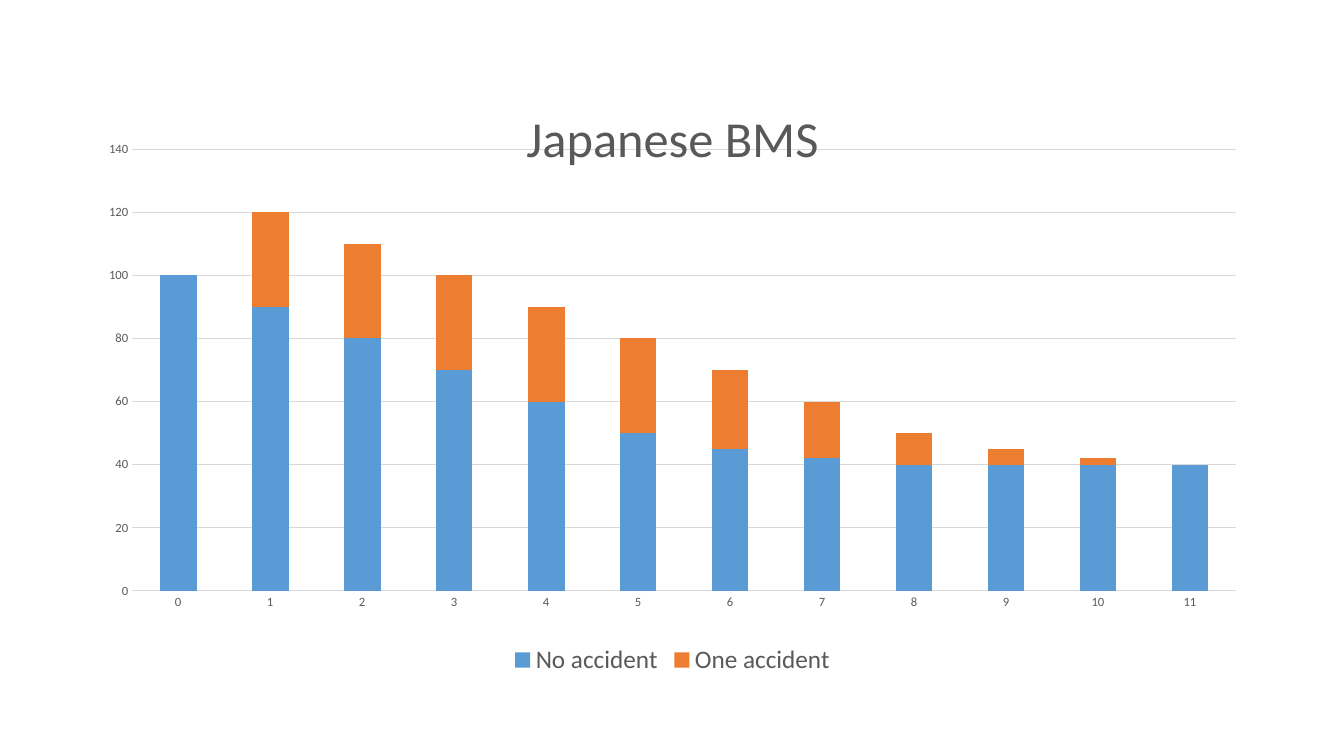
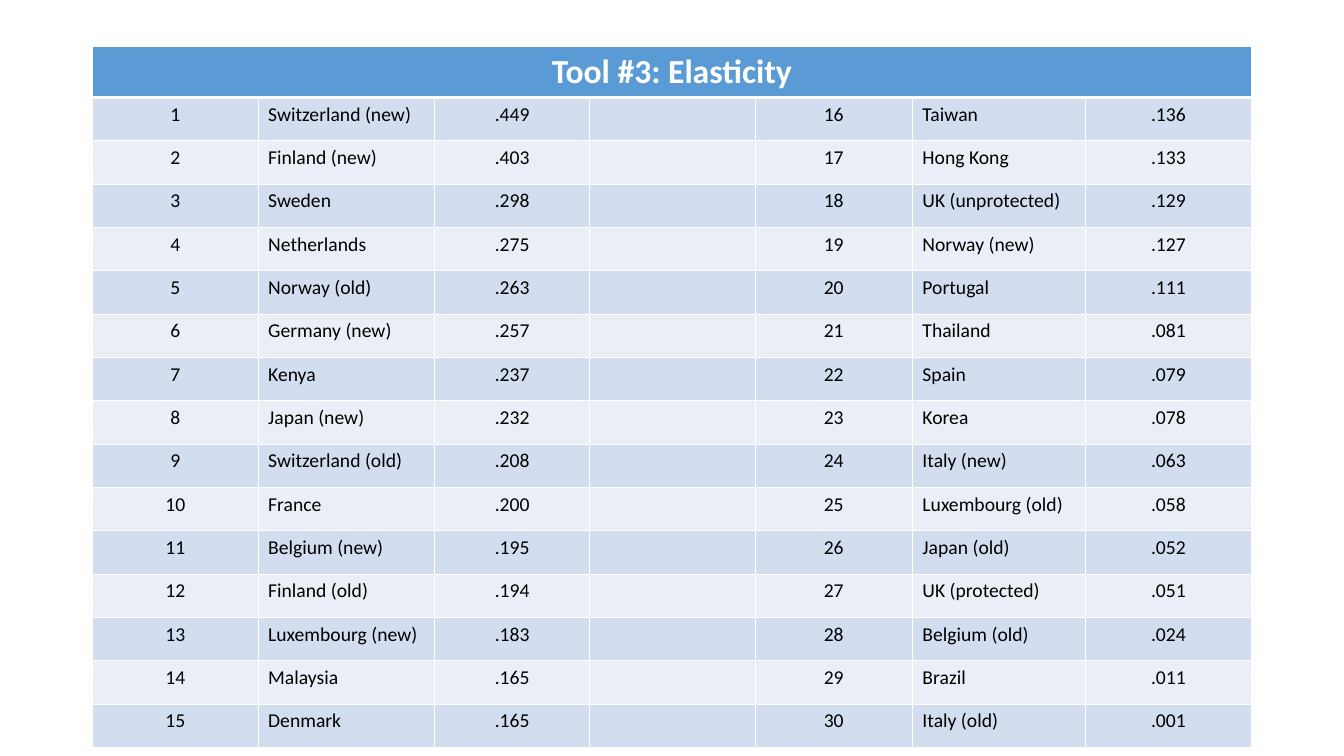
import pptx
import pptx.chart.data
import pptx.dml.color
import pptx.enum.chart
import pptx.enum.text
import pptx.oxml
import pptx.oxml.ns
import pptx.util
from pptx.util import Inches, Pt

FONT = "Calibri"
BLUE, ORANGE = "5B9BD5", "ED7D31"
GREY, RULE = "595959", "D9D9D9"
WHITE, BLACK = "FFFFFF", "000000"
BANDS = ("D2DEEF", "EAEFF7")
LEFT, WIDTH = 0.92, 11.5

NO_ACCIDENT = (100, 90, 80, 70, 60, 50, 45, 42, 40, 40, 40, 40)
ONE_ACCIDENT = (0, 30, 30, 30, 30, 30, 25, 18, 10, 5, 2, 0)

COLUMNS = (1.64, 1.75, 1.54, 1.64, 1.56, 1.72, 1.64)
NAME_COLUMNS = (1, 5)
ROW_HEIGHT = 0.43
# Countries in rank order, filling the left half and then the right half
ELASTICITIES = (
    ("Switzerland (new)", ".449"), ("Finland (new)", ".403"),
    ("Sweden", ".298"), ("Netherlands", ".275"),
    ("Norway (old)", ".263"), ("Germany (new)", ".257"),
    ("Kenya", ".237"), ("Japan (new)", ".232"),
    ("Switzerland (old)", ".208"), ("France", ".200"),
    ("Belgium (new)", ".195"), ("Finland (old)", ".194"),
    ("Luxembourg (new)", ".183"), ("Malaysia", ".165"),
    ("Denmark", ".165"), ("Taiwan", ".136"),
    ("Hong Kong", ".133"), ("UK (unprotected)", ".129"),
    ("Norway (new)", ".127"), ("Portugal", ".111"),
    ("Thailand", ".081"), ("Spain", ".079"),
    ("Korea", ".078"), ("Italy (new)", ".063"),
    ("Luxembourg (old)", ".058"), ("Japan (old)", ".052"),
    ("UK (protected)", ".051"), ("Belgium (old)", ".024"),
    ("Brazil", ".011"), ("Italy (old)", ".001"),
)


def rgb(value):
    return pptx.dml.color.RGBColor.from_string(value)


def set_fill(fill, color):
    fill.solid()
    fill.fore_color.rgb = rgb(color)


def set_font(font, size, color, bold=False):
    font.name, font.size, font.bold = FONT, Pt(size), bold
    font.color.rgb = rgb(color)


def set_line(line, color, width=0.75):
    line.color.rgb = rgb(color)
    line.width = Pt(width)


def set_plot_layout(chart, x, y, w, h):
    """Fix the inner plot area, in fractions of the chart."""
    area = chart._chartSpace.chart.plotArea
    for old in area.findall(pptx.oxml.ns.qn("c:layout")):
        area.remove(old)
    parts = "".join(f'<c:{tag} val="{val}"/>' for tag, val in (
        ("layoutTarget", "inner"), ("xMode", "edge"), ("yMode", "edge"),
        ("x", x), ("y", y), ("w", w), ("h", h)))
    area.insert(0, pptx.oxml.parse_xml(
        f'<c:layout {pptx.oxml.ns.nsdecls("c")}>'
        f"<c:manualLayout>{parts}</c:manualLayout></c:layout>"))


def set_borders(cell, top=1, bottom=1):
    tcPr = cell._tc.get_or_add_tcPr()
    widths = (("L", 1), ("R", 1), ("T", top), ("B", bottom))
    for i, (side, width) in enumerate(widths):
        tcPr.insert(i, pptx.oxml.parse_xml(
            f'<a:ln{side} {pptx.oxml.ns.nsdecls("a")} w="{Pt(width)}">'
            f'<a:solidFill><a:srgbClr val="{WHITE}"/></a:solidFill>'
            f"</a:ln{side}>"))


def add_premium_chart(s, left, top, width, height):
    data = pptx.chart.data.CategoryChartData()
    data.categories = [str(i) for i in range(len(NO_ACCIDENT))]
    data.add_series("No accident", NO_ACCIDENT)
    data.add_series("One accident", ONE_ACCIDENT)
    chart = s.shapes.add_chart(
        pptx.enum.chart.XL_CHART_TYPE.COLUMN_STACKED, Inches(left),
        Inches(top), Inches(width), Inches(height), data).chart
    set_font(chart.font, 10, BLACK)
    set_plot_layout(chart, 0.034, 0.12, 0.952, 0.732)

    # Title
    chart.has_title = True
    tf = chart.chart_title.text_frame
    tf.text = "Japanese BMS"
    set_font(tf.paragraphs[0].font, 36, GREY)

    # Bars
    plot = chart.plots[0]
    plot.gap_width, plot.overlap = 150, 100
    plot.vary_by_categories = False
    for series, color in zip(plot.series, (BLUE, ORANGE)):
        set_fill(series.format.fill, color)

    # Axes
    for axis in (chart.category_axis, chart.value_axis):
        axis.major_tick_mark = pptx.enum.chart.XL_TICK_MARK.NONE
        axis.minor_tick_mark = pptx.enum.chart.XL_TICK_MARK.NONE
        set_font(axis.tick_labels.font, 9, GREY)
    set_line(chart.category_axis.format.line, RULE)
    values = chart.value_axis
    values.minimum_scale, values.maximum_scale = 0, 140
    values.major_unit = 20
    values.format.line.fill.background()
    set_line(values.major_gridlines.format.line, RULE)

    # Legend
    chart.has_legend = True
    chart.legend.position = pptx.enum.chart.XL_LEGEND_POSITION.BOTTOM
    chart.legend.include_in_layout = False
    set_font(chart.legend.font, 18, GREY)


def fill_cell(cell, text, color, size, ink, centred=True, bold=False):
    set_fill(cell.fill, color)
    p = cell.text_frame.paragraphs[0]
    if text:
        p.text = text
    align = pptx.enum.text.PP_ALIGN
    p.alignment = align.CENTER if centred else align.LEFT
    set_font(p.font, size, ink, bold)


def add_elasticity_table(s, left, top, width):
    half = len(ELASTICITIES) // 2
    tbl = s.shapes.add_table(
        half + 1, len(COLUMNS), Inches(left), Inches(top), Inches(width),
        Inches(ROW_HEIGHT * (half + 1))).table
    tbl.horz_banding = False
    for column, column_width in zip(tbl.columns, COLUMNS):
        column.width = Inches(column_width)
    for row in tbl.rows:
        row.height = Inches(ROW_HEIGHT)

    # Heading across all columns
    head = tbl.cell(0, 0)
    head.merge(tbl.cell(0, len(COLUMNS) - 1))
    fill_cell(head, "Tool #3: Elasticity", BLUE, 24, WHITE, bold=True)
    for c in range(len(COLUMNS)):
        set_borders(tbl.cell(0, c), bottom=3)

    # Two ranked lists side by side, with an empty column between
    ranked = [(str(i), *entry) for i, entry in enumerate(ELASTICITIES, 1)]
    for r, (first, second) in enumerate(zip(ranked, ranked[half:]), 1):
        for c, text in enumerate((*first, "", *second)):
            cell = tbl.cell(r, c)
            fill_cell(cell, text, BANDS[(r - 1) % 2], 14, BLACK,
                      centred=c not in NAME_COLUMNS)
            set_borders(cell, top=3 if r == 1 else 1)


def main():
    prs = pptx.Presentation()
    prs.slide_width, prs.slide_height = Inches(13.33), Inches(7.5)
    blank = prs.slide_layouts[6]
    add_premium_chart(prs.slides.add_slide(blank), LEFT, 0.76, WIDTH, 5.99)
    add_elasticity_table(prs.slides.add_slide(blank), LEFT, 0.46, WIDTH)
    prs.save("out.pptx")


if __name__ == "__main__":
    main()
